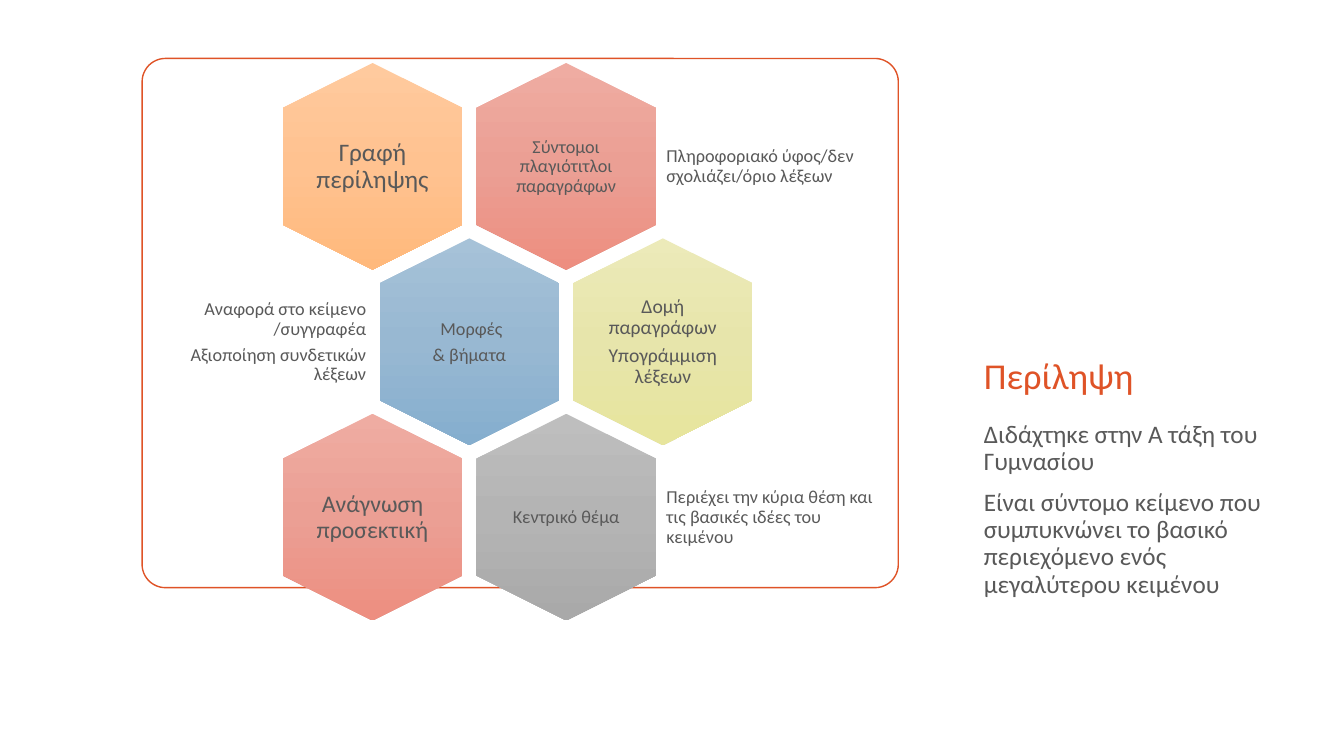
from pptx import Presentation
from pptx.dml.color import RGBColor as RGB
from pptx.enum.shapes import MSO_SHAPE as Shape
from pptx.enum.text import MSO_ANCHOR as Anchor, PP_ALIGN as Align
from pptx.oxml import parse_xml
from pptx.oxml.ns import nsdecls
from pptx.util import Inches, Pt

WHITE = RGB(0xFF, 0xFF, 0xFF)
RUST = RGB(0xDF, 0x53, 0x27)
GREY = RGB(0x59, 0x59, 0x59)

# Hexagon gradients, top to bottom
ORANGE = RGB(0xFF, 0xCA, 0x9E), RGB(0xFF, 0xC2, 0x90), RGB(0xFF, 0xB9, 0x7C)
RED = RGB(0xEF, 0xAC, 0xA2), RGB(0xEB, 0x9F, 0x94), RGB(0xED, 0x8E, 0x80)
BLUE = RGB(0xA6, 0xC2, 0xD8), RGB(0x98, 0xB8, 0xD2), RGB(0x85, 0xAE, 0xCE)
LIME = RGB(0xEC, 0xEA, 0xB9), RGB(0xE7, 0xE5, 0xAB), RGB(0xE7, 0xE5, 0x9D)
STONE = RGB(0xBE, 0xBE, 0xBE), RGB(0xB4, 0xB4, 0xB4), RGB(0xA9, 0xA9, 0xA9)

prs = Presentation()
prs.slide_width, prs.slide_height = Inches(13.33), Inches(7.5)
slide = prs.slides.add_slide(prs.slide_layouts[6])


def write(box, lines, size, color=GREY, align=Align.LEFT,
          anchor=Anchor.MIDDLE, inset=0.05, before=0, after=0):
    x, y, w, h = map(Inches, box)
    frame = slide.shapes.add_textbox(x, y, w, h).text_frame
    frame.word_wrap = True
    frame.vertical_anchor = anchor
    frame.margin_left = frame.margin_right = Inches(inset)
    frame.margin_top = frame.margin_bottom = Inches(min(inset, 0.05))
    frame.text = "\n".join(lines)
    for i, para in enumerate(frame.paragraphs):
        para.alignment = align
        para.line_spacing = 0.9
        para.space_before = Pt(before if i else 0)
        para.space_after = Pt(after)
        para.font.name = "Calibri"
        para.font.size = Pt(size)
        para.font.color.rgb = color


def shade(shape, stops):
    marks = "".join(f'<a:gs pos="{50000 * i}"><a:srgbClr val="{c}"/></a:gs>'
                    for i, c in enumerate(stops))
    grad = parse_xml(f'<a:gradFill {nsdecls("a")} rotWithShape="0"><a:gsLst>{marks}'
                     '</a:gsLst><a:lin ang="5400000" scaled="0"/></a:gradFill>')
    shape.fill.background()
    none = shape.fill._xPr.find("{*}noFill")
    none.getparent().replace(none, grad)


# Frame
frame = slide.shapes.add_shape(Shape.ROUNDED_RECTANGLE, Inches(1.41), Inches(0.58),
                               Inches(7.5), Inches(5.25))
frame.adjustments[0] = 0.044
frame.shadow.inherit = False
frame.fill.solid()
frame.fill.fore_color.rgb = WHITE
frame.line.color.rgb = RUST
frame.line.width = Pt(1)

# Title and body
write((9.66, 2.49, 3, 1.5), ["Περίληψη"], 26, RUST, anchor=Anchor.BOTTOM, inset=0.1)
write((9.66, 4.13, 3, 2.12),
      ["Διδάχτηκε στην Α τάξη του Γυμνασίου",
       "Είναι σύντομο κείμενο που συμπυκνώνει το βασικό περιεχόμενο ενός "
       "μεγαλύτερου κειμένου"],
      18, anchor=Anchor.TOP, inset=0.1, before=10)

# Honeycomb: row, column, gradient, size, inset, lines
cells = [
    (0, 1, RED, 13, 0.05, ["Σύντομοι πλαγιότιτλοι παραγράφων"]),
    (0, 0, ORANGE, 18, 0, ["Γραφή περίληψης"]),
    (1, 0, BLUE, 13, 0.05, [" Μορφές", "& βήματα"]),
    (1, 1, LIME, 14, 0, ["Δομή παραγράφων", "Υπογράμμιση λέξεων"]),
    (2, 1, STONE, 13, 0.05, ["Κεντρικό θέμα"]),
    (2, 0, RED, 17, 0, ["Ανάγνωση προσεκτική"]),
]
for row, col, stops, size, inset, lines in cells:
    x = 2.67 + 1.92 * col + 0.96 * (row % 2)
    y = 0.76 + 1.74 * row
    cell = slide.shapes.add_shape(Shape.HEXAGON, Inches(x), Inches(y),
                                  Inches(2.05), Inches(1.78))
    cell.rotation = 90
    cell.shadow.inherit = False
    cell.line.fill.background()
    shade(cell, stops)
    write((x + 0.41, y + 0.19, 1.23, 1.41), lines, size,
          align=Align.CENTER, inset=inset, after=0.35 * size)

# Notes beside the honeycomb, one per row
notes = [
    (6.56, 2.29, Align.LEFT, ["Πληροφοριακό ύφος/δεν σχολιάζει/όριο λέξεων"]),
    (1.47, 2.21, Align.RIGHT, ["Αναφορά στο κείμενο /συγγραφέα",
                               "Αξιοποίηση συνδετικών λέξεων"]),
    (6.56, 2.29, Align.LEFT,
     ["Περιέχει την κύρια θέση και τις βασικές ιδέες του κειμένου"]),
]
for row, (x, w, align, lines) in enumerate(notes):
    write((x, 1.04 + 1.74 * row, w, 1.23), lines, 13, align=align, after=4.55)

prs.save("out.pptx")
